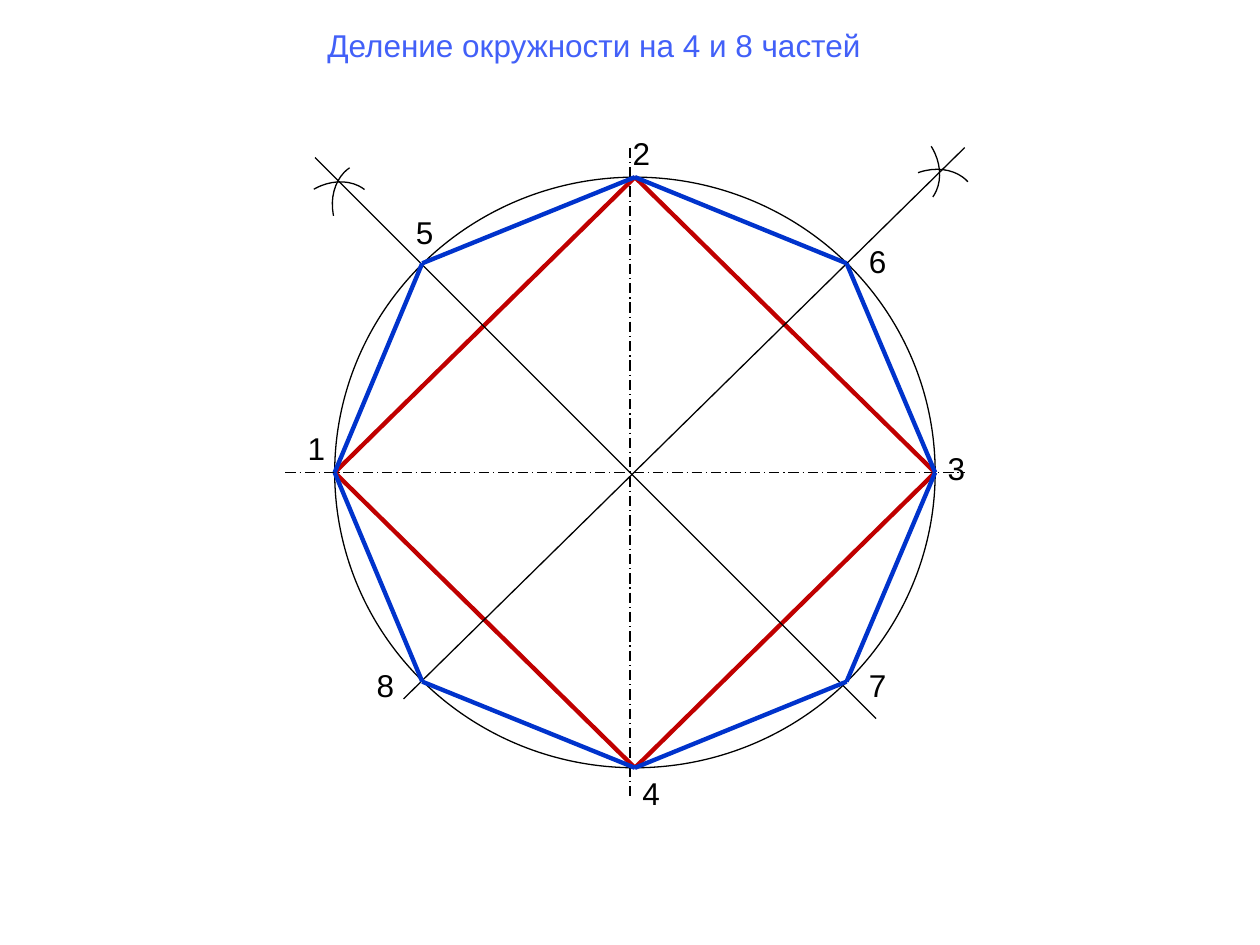
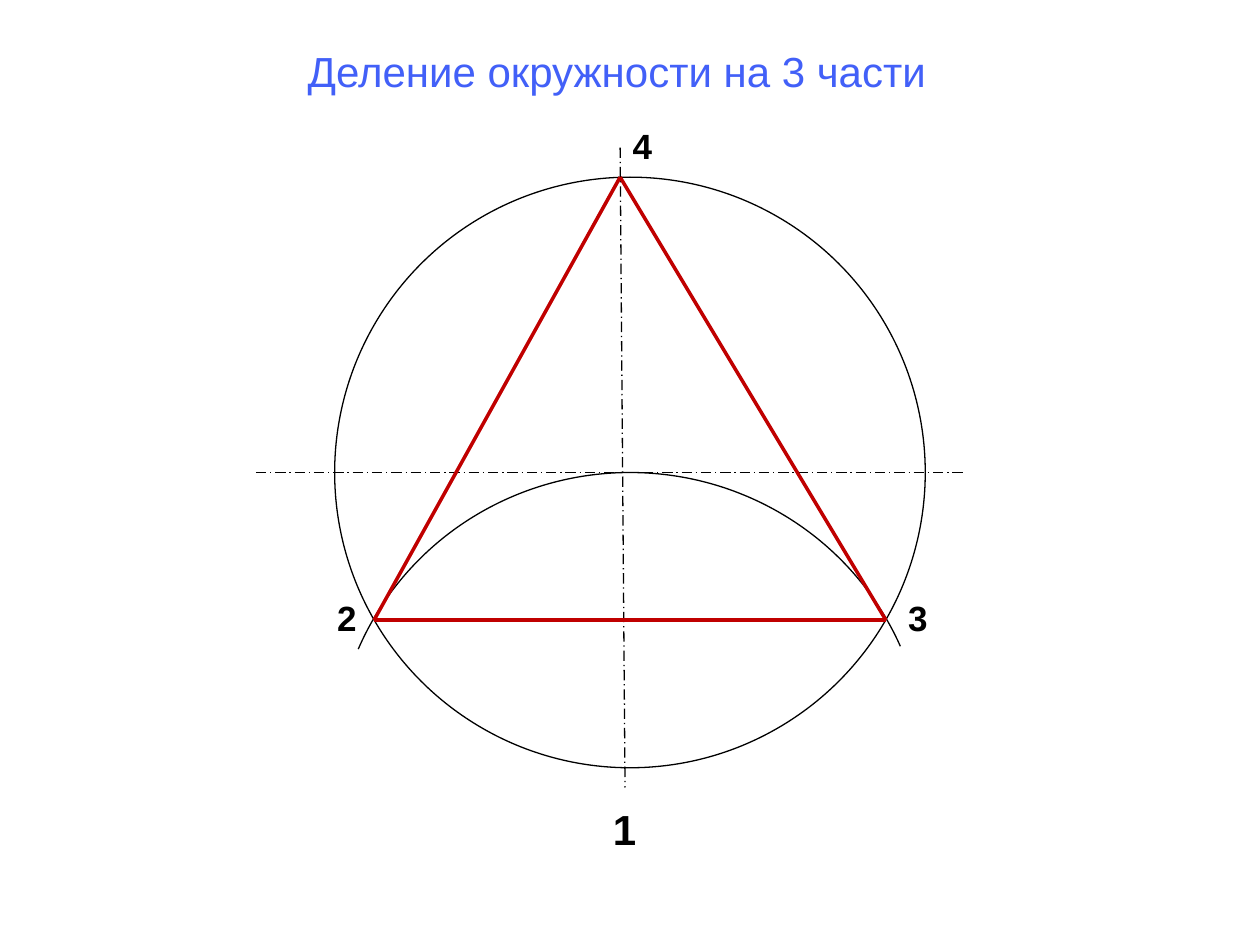
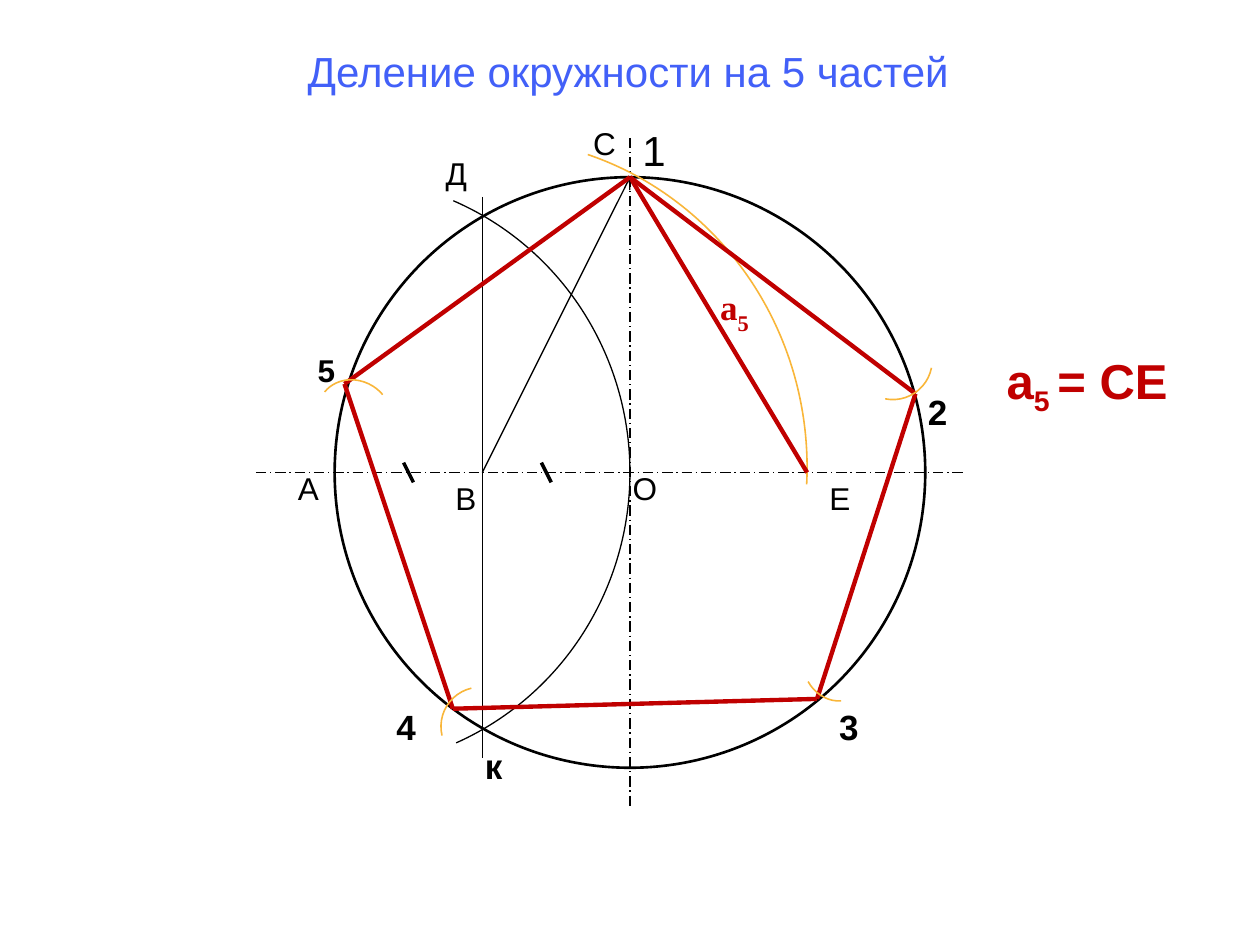
from dataclasses import dataclass
from itertools import pairwise

from lxml.etree import SubElement
from pptx import Presentation
from pptx.dml.color import RGBColor
from pptx.enum.dml import MSO_LINE
from pptx.enum.shapes import MSO_CONNECTOR, MSO_SHAPE
from pptx.enum.text import MSO_ANCHOR, MSO_AUTO_SIZE
from pptx.oxml.ns import qn
from pptx.slide import Slide
from pptx.util import Inches, Pt

BLACK = RGBColor(0x00, 0x00, 0x00)
RED = RGBColor(0xC0, 0x00, 0x00)
BLUE = RGBColor(0x00, 0x33, 0xCC)
ORANGE = RGBColor(0xF9, 0xB6, 0x39)
TITLE_BLUE = RGBColor(0x42, 0x60, 0xF8)

SLIDE_WIDTH, SLIDE_HEIGHT = Inches(10), Inches(7.5)
COLUMNS = 128
RADIUS = 30
THIN, COMPASS, BOLD_CIRCLE, SIDE = 0.75, 0.9, 1.5, 2.5


@dataclass
class Sheet:
    """Drawing field in grid cells, with the origin at the centre of its box."""
    slide: Slide
    left: int
    top: int
    width: int
    height: int

    def size(self, cells):
        return round(cells * self.width / COLUMNS)

    def x(self, cells):
        return self.left + self.width // 2 + self.size(cells)

    def y(self, cells):
        return self.top + self.height // 2 + self.size(cells)

    def frame(self, left, top, width, height):
        return self.x(left), self.y(top), self.size(width), self.size(height)

    def outline(self, preset, box, color, weight):
        shape = self.slide.shapes.add_shape(preset, *self.frame(*box))
        shape.shadow.inherit = False
        shape.fill.background()
        shape.line.color.rgb = color
        shape.line.width = Pt(weight)
        return shape

    def circle(self, width=2 * RADIUS, weight=THIN):
        box = (-RADIUS, -RADIUS, width, 2 * RADIUS)
        self.outline(MSO_SHAPE.OVAL, box, BLACK, weight)

    def arc(self, box, start=270, end=0, turn=0, color=BLACK, weight=THIN):
        """Arc between two angles in degrees, clockwise from the right."""
        shape = self.outline(MSO_SHAPE.ARC, box, color, weight)
        # An adjustment of 1 is 100000 units; a degree is 60000 units.
        shape.adjustments[0] = start * 0.6
        shape.adjustments[1] = end * 0.6
        shape.rotation = turn

    def line(self, start, end, color=BLACK, weight=THIN):
        line = self.slide.shapes.add_connector(
            MSO_CONNECTOR.STRAIGHT, self.x(start[0]), self.y(start[1]),
            self.x(end[0]), self.y(end[1]))
        line.line.color.rgb = color
        line.line.width = Pt(weight)
        SubElement(line._element.spPr, qn("a:effectLst"))
        return line

    def polygon(self, points, color, weight=SIDE):
        for start, end in pairwise([*points, points[0]]):
            self.line(start, end, color, weight)

    def axes(self, vertical, horizontal):
        for ends in (vertical, horizontal):
            self.line(*ends).line.dash_style = MSO_LINE.LONG_DASH_DOT

    def text_frame(self, *box):
        frame = self.slide.shapes.add_textbox(*self.frame(*box)).text_frame
        frame.word_wrap = True
        frame.vertical_anchor = MSO_ANCHOR.TOP
        return frame

    def text(self, words, left, top, width, size=18, bold=False, color=BLACK):
        frame = self.text_frame(left, top, width, 0.22 * size + 1.15)
        frame.auto_size = MSO_AUTO_SIZE.SHAPE_TO_FIT_TEXT
        frame.text = words
        style_font(frame.paragraphs[0].runs[0].font, size, bold, color)

    def side_length(self, box, font_name, sizes, drop, ending=""):
        """The side symbol а with a lowered 5, then any ending."""
        paragraph = self.text_frame(*box).paragraphs[0]
        parts = ("а", "5 " if ending else "5", ending)
        for words, size, lowered in zip(parts, sizes, (0, drop, 0)):
            run = paragraph.add_run()
            run.text = words
            style_font(run.font, size, True, RED, font_name)
            if lowered:
                run.font._element.set("baseline", str(-1000 * lowered))


def style_font(font, size, bold, color, name="Arial"):
    font.name = name
    font.size = Pt(size)
    font.bold = bold
    font.color.rgb = color


def draw_four_and_eight_parts(sheet):
    west, north, east, south = (-30, 0), (0.5, -30), (31, 0), (0.5, 30)
    north_west, north_east = (-21.1, -21.25), (22, -21.25)
    south_west, south_east = (-21.1, 21.25), (22, 21.25)

    sheet.circle(width=61)
    sheet.axes(((0, -33), (0, 33)), ((-35, 0), (34, 0)))
    sheet.polygon((west, north, east, south), RED)
    sheet.line((-23, 23), (34, -33))
    sheet.line((25, 25), (-32, -32))
    for left, top, turn in ((22.9, -34.8, 59.5), (26, -30.7, 341.6),
                            (-31.1, -30.6, 259.8), (-34.8, -29.3, 331.6)):
        sheet.arc((left, top, 9.2, 7.4), 267.29, 344.26, turn)

    sheet.text("Деление окружности на 4 и 8 частей", -32, -46, 77, color=TITLE_BLUE)
    for label in (("1", -34, -5, 3), ("2", -1, -35, 6), ("3", 31, -3, 5),
                  ("4", 0, 30, 6), ("5", -23, -27, 4), ("6", 23, -24, 4),
                  ("7", 23, 19, 6), ("8", -27, 19, 5)):
        sheet.text(*label)
    sheet.polygon((west, north_west, north, north_east,
                   east, south_east, south, south_west), BLUE)


def draw_three_parts(sheet):
    sheet.circle()
    sheet.axes(((-1, -33), (-0.5, 32)), ((-38, 0), (34, 0)))
    sheet.arc((-29.5, -0.5, 59, 60), 292.73, 66.67, turn=270)
    sheet.polygon(((-1, -30), (26, 15), (-26, 15)), RED, weight=2)

    sheet.text("Деление окружности на 3 части", -34, -44, 69, 24, color=TITLE_BLUE)
    for label in (("1", -3, 33, 5, 24), ("2", -31, 12, 5, 20),
                  ("3", 27, 12, 4, 20), ("4", -1, -36, 4, 20)):
        sheet.text(*label, bold=True)


def draw_five_parts(sheet):
    point_b, point_c, point_e = (-15, 0), (0, -30), (18, 0)

    sheet.circle(weight=BOLD_CIRCLE)
    sheet.axes(((0, -34), (0, 34)), ((-38, 0), (34, 0)))
    sheet.arc((-59, -30, 59, 60), 292.73, 66.67)
    sheet.line((-15, -28), (-15, 29))
    sheet.arc((-47, -34, 65, 67), 287.82, 3.03, color=ORANGE, weight=COMPASS)
    sheet.line(point_c, point_e, RED, SIDE)
    radius_line = sheet.line(point_b, point_c).line
    SubElement(radius_line._get_or_add_ln(), qn("a:tailEnd"), type="arrow")
    for tick in (-23, -9):
        sheet.line((tick, -1), (tick + 1, 1), weight=2)

    sheet.text("Деление окружности на 5 частей", -34, -44, 69, 24, color=TITLE_BLUE)
    sheet.text("1", 0, -36, 5, 24)
    for label in (("О", -1, -1, 5), ("А", -35, -1, 4), ("В", -19, 0, 4),
                  ("С", -5, -36, 5), ("Д", -20, -33, 6), ("Е", 19, 0, 5)):
        sheet.text(*label)
    for label in (("2", 29, -9, 5, 20), ("3", 20, 23, 4, 20), ("4", -25, 23, 5, 20),
                  ("5", -33, -13, 5, 18), ("к", -16, 27, 5, 20)):
        sheet.text(*label, bold=True)
    sheet.side_length((7.9, -20, 6.7, 6), "Times New Roman", (20, 22), 30)
    sheet.side_length((37, -13, 23, 24), "Arial", (28, 28, 28), 25, "= СЕ")

    sheet.polygon((point_c, (29, -8), (19, 23), (-18, 24), (-29, -9)), RED)
    for box, start, end, turn in (
            ((22.7, -15.4, 8, 8), 270, 0, 101.2),
            ((17.7, 16.1, 6.4, 7.2), 289.63, 0, 151.3),
            ((-19.2, 21.8, 8, 8), 270, 0, 256.8),
            ((-31.4, -9.7, 6.9, 7.7), 275.16, 21.92, 302.1)):
        sheet.arc(box, start, end, turn, ORANGE, COMPASS)


def main():
    deck = Presentation()
    deck.slide_width, deck.slide_height = SLIDE_WIDTH, SLIDE_HEIGHT
    for draw in (draw_four_and_eight_parts, draw_three_parts, draw_five_parts):
        slide = deck.slides.add_slide(deck.slide_layouts[6])
        draw(Sheet(slide, 0, 0, SLIDE_WIDTH, SLIDE_HEIGHT))
    deck.save("out.pptx")


if __name__ == "__main__":
    main()
